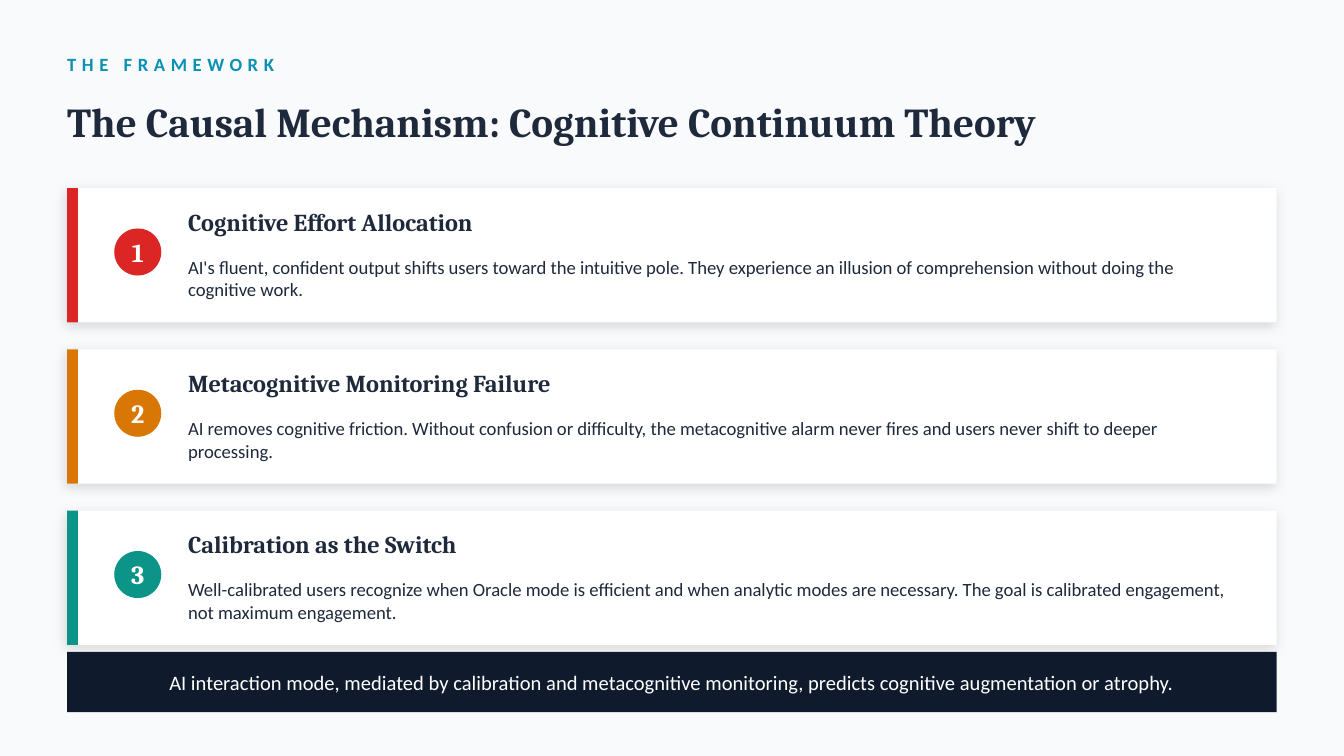
from lxml.etree import SubElement
from pptx import Presentation
from pptx.dml.color import RGBColor
from pptx.enum.shapes import MSO_SHAPE as Shape
from pptx.enum.text import MSO_ANCHOR as Anchor, PP_ALIGN as Align
from pptx.oxml.ns import qn
from pptx.util import Pt

BACKGROUND = RGBColor(0xF8, 0xFA, 0xFC)
WHITE = RGBColor(0xFF, 0xFF, 0xFF)
INK = RGBColor(0x1E, 0x29, 0x3B)
NAVY = RGBColor(0x0F, 0x1B, 0x2D)
CYAN = RGBColor(0x08, 0x91, 0xB2)
RED = RGBColor(0xDC, 0x26, 0x26)
AMBER = RGBColor(0xD9, 0x77, 0x06)
TEAL = RGBColor(0x0D, 0x94, 0x88)

HEADING_FONT, BODY_FONT = "Cambria", "Calibri"

# Layout in points
LEFT, WIDTH = 36, 648
CARD_TOP, CARD_HEIGHT, CARD_GAP = 100.8, 72, 14.4
TEXT_LEFT, TEXT_WIDTH = 100.8, 561.6

STAGES = [
    (RED, "Cognitive Effort Allocation",
     "AI's fluent, confident output shifts users toward the intuitive pole. "
     "They experience an illusion of comprehension without doing the cognitive work."),
    (AMBER, "Metacognitive Monitoring Failure",
     "AI removes cognitive friction. Without confusion or difficulty, the "
     "metacognitive alarm never fires and users never shift to deeper processing."),
    (TEAL, "Calibration as the Switch",
     "Well-calibrated users recognize when Oracle mode is efficient and when analytic "
     "modes are necessary. The goal is calibrated engagement, not maximum engagement."),
]


def write(holder, text, size, color, font=BODY_FONT, bold=False, align=Align.LEFT):
    """Fill a shape or text box with one styled paragraph and return its run."""
    frame = holder.text_frame
    frame.text = text
    frame.word_wrap = True
    frame.vertical_anchor = Anchor.MIDDLE
    frame.margin_left = frame.margin_right = frame.margin_top = frame.margin_bottom = 0
    paragraph = frame.paragraphs[0]
    paragraph.alignment = align
    run = paragraph.runs[0]
    run.font.name = font
    run.font.size = Pt(size)
    run.font.bold = bold
    run.font.color.rgb = color
    return run


def add_text(slide, left, top, width, height, text, size, color, **style):
    box = slide.shapes.add_textbox(Pt(left), Pt(top), Pt(width), Pt(height))
    return write(box, text, size, color, **style)


def add_block(slide, kind, left, top, width, height, color):
    block = slide.shapes.add_shape(kind, Pt(left), Pt(top), Pt(width), Pt(height))
    block.fill.solid()
    block.fill.fore_color.rgb = color
    block.line.fill.background()
    block.shadow.inherit = False
    return block


def add_soft_shadow(block):
    effects = block._element.spPr.find(qn("a:effectLst"))
    shadow = SubElement(effects, qn("a:outerShdw"), blurRad=str(Pt(6)), dist=str(Pt(2)),
                        dir=str(135 * 60000), algn="bl", rotWithShape="0")
    color = SubElement(shadow, qn("a:srgbClr"), val="000000")
    SubElement(color, qn("a:alpha"), val="12000")


def add_stage(slide, number, top, color, heading, detail):
    # Card with accent edge
    card = add_block(slide, Shape.RECTANGLE, LEFT, top, WIDTH, CARD_HEIGHT, WHITE)
    add_soft_shadow(card)
    add_block(slide, Shape.RECTANGLE, LEFT, top, 5.76, CARD_HEIGHT, color)

    # Number badge
    badge = add_block(slide, Shape.OVAL, 61.2, top + 21.6, 25.2, 25.2, color)
    write(badge, str(number), 14, WHITE, font=HEADING_FONT, bold=True, align=Align.CENTER)

    # Heading and detail
    add_text(slide, TEXT_LEFT, top + 7.2, TEXT_WIDTH, 21.6, heading, 13, INK,
             font=HEADING_FONT, bold=True)
    add_text(slide, TEXT_LEFT, top + 30.24, TEXT_WIDTH, 36, detail, 10, INK)


def main():
    deck = Presentation()
    deck.slide_width, deck.slide_height = Pt(720), Pt(405)
    slide = deck.slides.add_slide(deck.slide_layouts[6])
    slide.background.fill.solid()
    slide.background.fill.fore_color.rgb = BACKGROUND

    # Header
    eyebrow = add_text(slide, LEFT, 21.6, 216, 25.2, "THE FRAMEWORK", 10, CYAN, bold=True)
    eyebrow._r.get_or_add_rPr().set("spc", "300")
    add_text(slide, LEFT, 46.8, WIDTH, 36,
             "The Causal Mechanism: Cognitive Continuum Theory", 22, INK,
             font=HEADING_FONT, bold=True)

    # Stages of the mechanism
    for index, stage in enumerate(STAGES):
        add_stage(slide, index + 1, CARD_TOP + index * (CARD_HEIGHT + CARD_GAP), *stage)

    # Takeaway band
    add_block(slide, Shape.RECTANGLE, LEFT, 349.2, WIDTH, 32.4, NAVY)
    add_text(slide, 50.4, 349.2, 619.2, 32.4,
             "AI interaction mode, mediated by calibration and metacognitive monitoring, "
             "predicts cognitive augmentation or atrophy.", 11, WHITE, align=Align.CENTER)

    deck.save("out.pptx")


if __name__ == "__main__":
    main()
